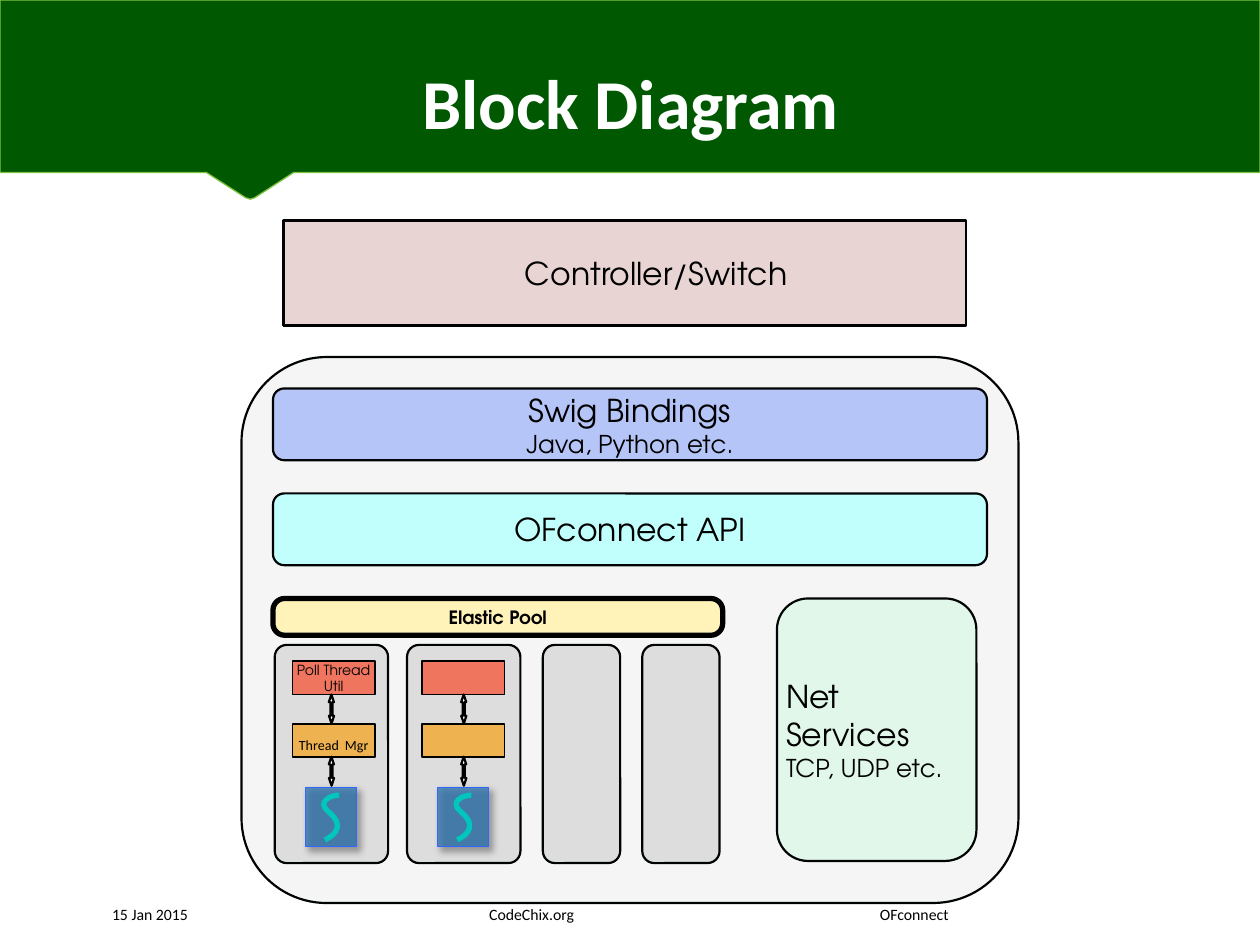
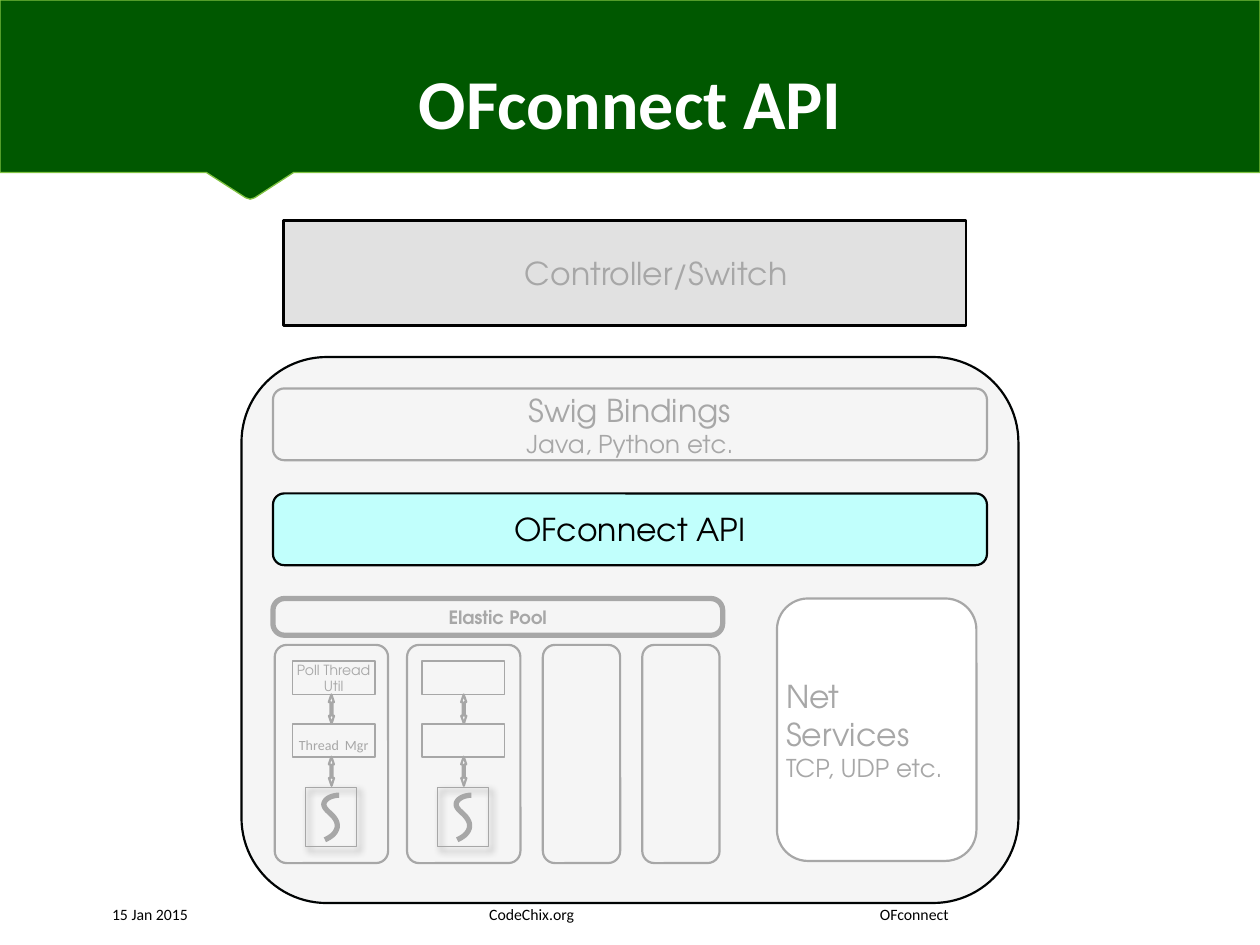
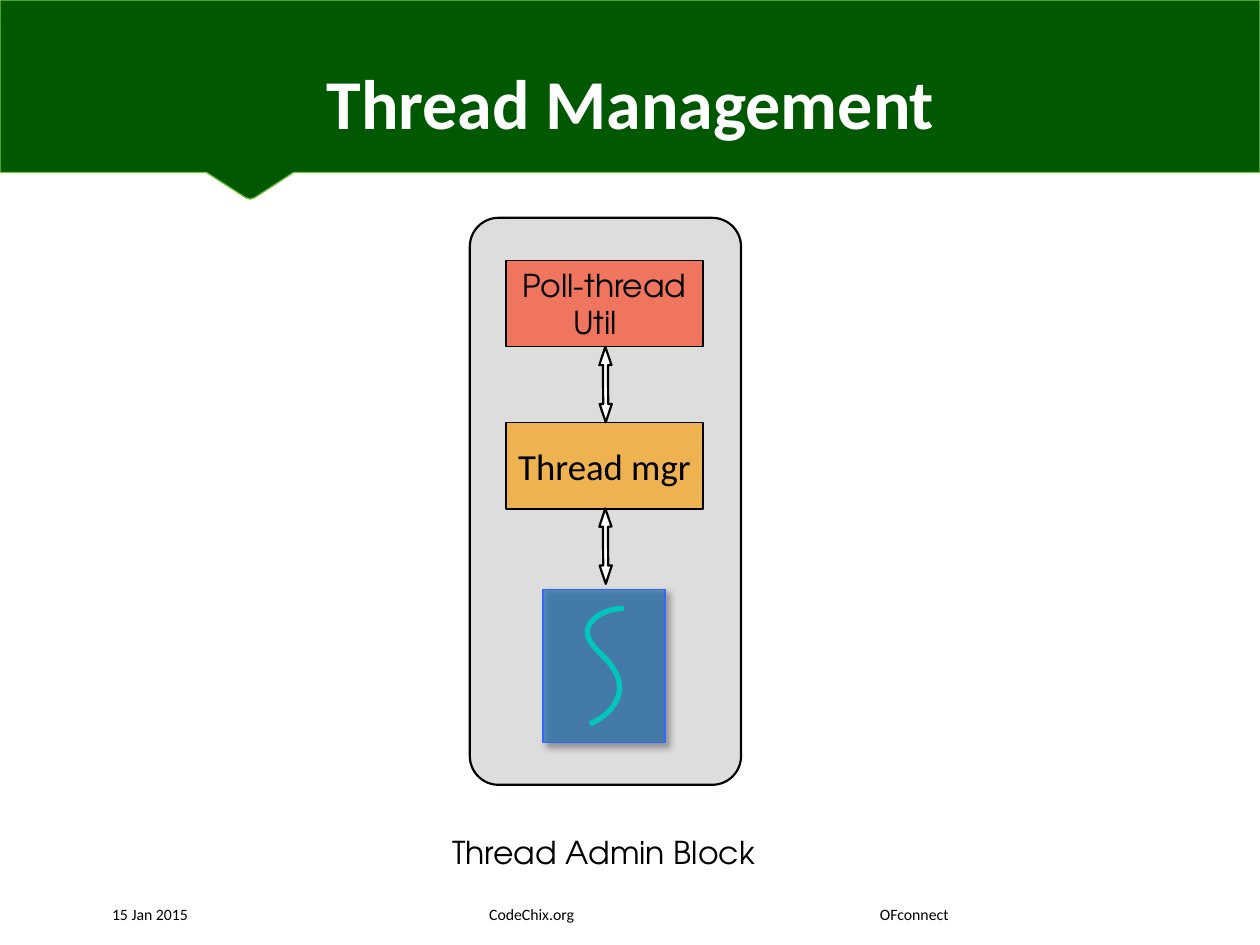
"""Build three slides that explain the blocks and threads of OFconnect."""
import dataclasses

import lxml.etree
import pptx
import pptx.dml.color
import pptx.enum.shapes
import pptx.enum.text
import pptx.oxml.ns
import pptx.util

Pt = pptx.util.Pt
MSO_SHAPE = pptx.enum.shapes.MSO_SHAPE
PP_ALIGN = pptx.enum.text.PP_ALIGN
MSO_ANCHOR = pptx.enum.text.MSO_ANCHOR


@dataclasses.dataclass(frozen=True)
class Palette:
    """Fills as (colour, opacity percent) or None, and line and text colours."""
    controller: tuple
    bindings: tuple = None
    pool: tuple = None
    column: tuple = None
    poll: tuple = None
    manager: tuple = None
    thread: tuple = None
    arrow: tuple = None
    net: tuple = ("FFFFFF", 100)
    ink: str = "A7A7A7"
    edge: str = "A7A7A7"
    thread_edge: str = "A7A7A7"
    curve: str = "A7A7A7"


@dataclasses.dataclass(frozen=True)
class Theme:
    """Colours, fonts and type sizes that the slides share."""
    band: tuple = ("005800", 100)
    band_edge: str = "80C342"
    frame: tuple = ("F2F2F2", 71)
    api: tuple = ("C1FFFC", 100)
    black: str = "000000"
    edge: str = "000303"
    white: str = "FFFFFF"
    body_font: str = "TeX Gyre Adventor"
    plain_font: str = "Calibri"
    title_size: float = 40
    manager_size: float = 21
    block_size: float = 18
    gap_size: float = 15
    detail_size: float = 14
    pool_size: float = 10.5
    footer_size: float = 9
    small_size: float = 8
    full: Palette = Palette(
        controller=("800000", 17), bindings=("3366FF", 33),
        pool=("FFF3BA", 100), column=("DDDDDD", 100),
        poll=("EF755F", 100), manager=("EFB251", 100),
        thread=("2971AE", 74), arrow=("FFFFFF", 100),
        net=("E0F7E9", 100), ink="000000", edge="000303",
        thread_edge="3366FF", curve="00C6BB")
    muted: Palette = Palette(controller=("535353", 17))


THEME = Theme()
CURVE = [(1, 0), (0.48, 0), (0.03, 0.09), (0, 0.2), (0, 0.32), (0.48, 0.4),
         (0.69, 0.51), (1.1, 0.69), (0.83, 0.89), (0.07, 1)]
CURVE_STEPS = 16


def rgb(colour):
    """Turn a hexadecimal colour into an RGBColor."""
    return pptx.dml.color.RGBColor.from_string(colour)


def add_element(parent, tag, **attributes):
    """Append a drawing element with the given attributes."""
    element = lxml.etree.SubElement(parent, pptx.oxml.ns.qn(tag))
    for name, value in attributes.items():
        element.set(name, str(value))
    return element


def add_shadow(effects, blur, distance, opacity):
    """Add a black shadow towards the lower right to an effect list."""
    shadow = add_element(effects, "a:outerShdw", blurRad=int(Pt(blur)),
                         dist=int(Pt(distance)), dir=45 * 60000,
                         algn="tl", rotWithShape=0)
    colour = add_element(shadow, "a:srgbClr", val=THEME.black)
    add_element(colour, "a:alpha", val=opacity * 1000)


def paint(shape, fill, line, width):
    """Set fill, opacity and outline, and take the inherited shadow off."""
    shape.shadow.inherit = False
    if fill:
        colour, opacity = fill
        shape.fill.solid()
        shape.fill.fore_color.rgb = rgb(colour)
        if opacity < 100:
            target = shape.fill._xPr.find(".//" + pptx.oxml.ns.qn("a:srgbClr"))
            add_element(target, "a:alpha", val=opacity * 1000)
    else:
        shape.fill.background()
    shape.line.color.rgb = rgb(line)
    shape.line.width = Pt(width)


def write(shape, lines, colour, font=THEME.body_font, bold=False,
          align=PP_ALIGN.CENTER, anchor=MSO_ANCHOR.MIDDLE, inset=0):
    """Fill a shape with lines, each a list of (text, size) runs."""
    frame = shape.text_frame
    frame.word_wrap = True
    frame.vertical_anchor = anchor
    frame.margin_left = frame.margin_right = Pt(inset)
    frame.margin_top = frame.margin_bottom = Pt(inset)
    for index, runs in enumerate(lines):
        paragraph = frame.add_paragraph() if index else frame.paragraphs[0]
        paragraph.alignment = align
        for text, size in runs:
            run = paragraph.add_run()
            run.text = text
            run.font.size = Pt(size)
            run.font.name = font
            run.font.bold = bold
            run.font.color.rgb = rgb(colour)


def add_box(slide, bounds, fill, line, width=1.25, radius=None):
    """Add a rectangle, rounded when a radius is given."""
    kind = MSO_SHAPE.RECTANGLE if radius is None else MSO_SHAPE.ROUNDED_RECTANGLE
    shape = slide.shapes.add_shape(kind, *map(Pt, bounds))
    if radius is not None:
        shape.adjustments[0] = radius
    paint(shape, fill, line, width)
    return shape


def add_outline(slide, points, fill, line, width, close):
    """Add a freeform through points given in points."""
    start, *rest = [(Pt(x), Pt(y)) for x, y in points]
    builder = slide.shapes.build_freeform(*start)
    builder.add_line_segments(rest, close=close)
    shape = builder.convert_to_shape()
    paint(shape, fill, line, width)


def add_text(slide, bounds, lines, colour, **style):
    """Add a text box."""
    shape = slide.shapes.add_textbox(*map(Pt, bounds))
    write(shape, lines, colour, **style)
    return shape


def add_title(slide, title):
    """Add the green band and the shadowed title on it."""
    add_outline(slide, [(720, 0), (0, 0), (0, 98.6), (118, 98.6),
                        (140.4, 113), (143, 113.8), (145.6, 113),
                        (167.8, 98.6), (720, 98.6)],
                THEME.band, THEME.band_edge, 0.75, True)
    shape = add_text(slide, (64, 0, 592.5, 85.7), [[(title, THEME.title_size)]],
                     THEME.white, font=THEME.plain_font, bold=True,
                     anchor=MSO_ANCHOR.BOTTOM, inset=3.6)
    properties = shape.text_frame.paragraphs[0].runs[0].font._element
    effects = add_element(properties, "a:effectLst")
    add_shadow(effects, 4, 3, 43)
    properties.find(pptx.oxml.ns.qn("a:latin")).addprevious(effects)


def add_footer(slide):
    """Add date, site and project name at tab stops."""
    shape = slide.shapes.add_textbox(Pt(64), Pt(510), Pt(495.4), Pt(18))
    properties = shape.text_frame.paragraphs[0]._p.get_or_add_pPr()
    tabs = add_element(properties, "a:tabLst")
    for stop in (215.5, 438.8):
        add_element(tabs, "a:tab", pos=int(Pt(stop)), algn="l")
    write(shape, [[("15 Jan 2015\tCodeChix.org\tOFconnect", THEME.footer_size)]],
          THEME.black, font=THEME.plain_font, align=PP_ALIGN.LEFT,
          anchor=MSO_ANCHOR.BOTTOM)


def curve_points():
    """Sample the cubic segments of the thread symbol in a unit square."""
    points = [CURVE[0]]
    for first in range(0, len(CURVE) - 1, 3):
        corners = CURVE[first:first + 4]
        for step in range(1, CURVE_STEPS + 1):
            t = step / CURVE_STEPS
            weights = ((1 - t) ** 3, 3 * t * (1 - t) ** 2,
                       3 * t * t * (1 - t), t ** 3)
            points.append(tuple(
                sum(weight * corner[axis]
                    for weight, corner in zip(weights, corners))
                for axis in (0, 1)))
    return points


def add_thread_block(slide, bounds, palette, poll=None, manager=None, shift=0):
    """Add a column with poll utility, manager and thread, joined by arrows."""
    left, top, width, height = bounds

    def place(x, y, across, down):
        """Scale fractions of the column to a position and size."""
        return left + x * width, top + y * height, across * width, down * height

    def add_part(x, y, across, down, fill, line, weight):
        """Add one rectangle of the column."""
        return add_box(slide, place(x, y, across, down), fill, line, weight)

    add_box(slide, bounds, palette.column, palette.edge, radius=0.106)
    nudge = shift / width
    for y, fill, lines, font in (
            (0.075, palette.poll, poll, THEME.body_font),
            (0.361, palette.manager, manager, THEME.plain_font)):
        box = add_part(0.134 + nudge, y, 0.725, 0.152, fill, palette.ink, 1)
        if lines:
            write(box, lines, palette.ink, font=font)
    length, thickness = 0.133 * height, 0.045 * width
    for middle in (0.294, 0.579):
        arrow = slide.shapes.add_shape(
            MSO_SHAPE.LEFT_RIGHT_ARROW,
            Pt(left + (width - length) / 2),
            Pt(top + middle * height - thickness / 2),
            Pt(length), Pt(thickness))
        arrow.adjustments[0], arrow.adjustments[1] = 0.409, 1.497
        arrow.rotation = 89.6
        paint(arrow, palette.arrow, palette.ink, 1.25)
    thread = add_part(0.27, 0.655, 0.45, 0.271, palette.thread,
                      palette.thread_edge, 0.75)
    effects = thread._element.spPr.find(pptx.oxml.ns.qn("a:effectLst"))
    add_shadow(effects, 4, 3, 43)
    x, y, across, down = place(0.433, 0.689, 0.135, 0.204)
    add_outline(slide, [(x + u * across, y + v * down) for u, v in curve_points()],
                None, palette.curve, 3, False)


def add_block_diagram(slide, palette):
    """Add the layers from the controller down to the thread pool."""
    add_box(slide, (138, 204, 444, 312), THEME.frame, THEME.edge, radius=0.156)
    net = add_box(slide, (444, 342, 114, 150), palette.net, palette.edge,
                  radius=0.156)
    write(net, [[("Net Services", THEME.block_size)],
                [("TCP, UDP etc.", THEME.detail_size)]],
          palette.ink, align=PP_ALIGN.LEFT)

    small = THEME.small_size
    add_thread_block(slide, (232.6, 368.5, 64.8, 124.7), palette)
    add_thread_block(slide, (157, 368.5, 64.8, 124.7), palette,
                     [[("Poll Thread Util", small)]],
                     [[("Thread", small), (" ", THEME.gap_size), ("Mgr", small)]],
                     shift=1.5)
    pool = add_box(slide, (156, 342, 257, 21), palette.pool, palette.ink,
                   3, radius=0.318)
    write(pool, [[("Elastic Pool", THEME.pool_size)]], palette.ink, bold=True)
    for left in (310.2, 367):
        add_box(slide, (left, 368.5, 44.2, 124.7), palette.column,
                palette.edge, radius=0.156)

    api = add_box(slide, (156, 282, 408, 41), THEME.api, THEME.edge, radius=0.156)
    write(api, [[("OFconnect API", THEME.block_size)]], THEME.black)
    bindings = add_box(slide, (156, 222, 408, 41), palette.bindings,
                       palette.edge, radius=0.156)
    write(bindings, [[("Swig Bindings", THEME.block_size)],
                     [("Java, Python etc.", THEME.detail_size)]], palette.ink)
    controller = add_box(slide, (162, 126, 390, 60), palette.controller,
                         THEME.black)
    write(controller, [[("Controller/Switch", THEME.block_size)]],
          palette.ink, inset=3.6)
    properties = controller.text_frame.paragraphs[0]._p.get_or_add_pPr()
    properties.set("marL", str(int(Pt(36))))


def add_thread_diagram(slide):
    """Add one large thread column and its caption."""
    add_thread_block(slide, (268.5, 124.5, 155, 324), THEME.full,
                     [[("Poll-thread Util\t", THEME.block_size)]],
                     [[("Thread mgr", THEME.manager_size)]])
    add_text(slide, (254.9, 472.3, 184, 29.5),
             [[("Thread Admin Block", THEME.block_size)]], THEME.black,
             align=PP_ALIGN.LEFT, anchor=MSO_ANCHOR.TOP, inset=3.6)


def add_slide(presentation, title):
    """Add a blank slide with the shared band, title and footer."""
    slide = presentation.slides.add_slide(presentation.slide_layouts[6])
    add_title(slide, title)
    add_footer(slide)
    return slide


def main():
    """Build the slides and save them."""
    presentation = pptx.Presentation()
    presentation.slide_width, presentation.slide_height = Pt(720), Pt(540)
    add_block_diagram(add_slide(presentation, "Block Diagram"), THEME.full)
    add_block_diagram(add_slide(presentation, "OFconnect API"), THEME.muted)
    add_thread_diagram(add_slide(presentation, "Thread Management"))
    presentation.save("out.pptx")


if __name__ == "__main__":
    main()
